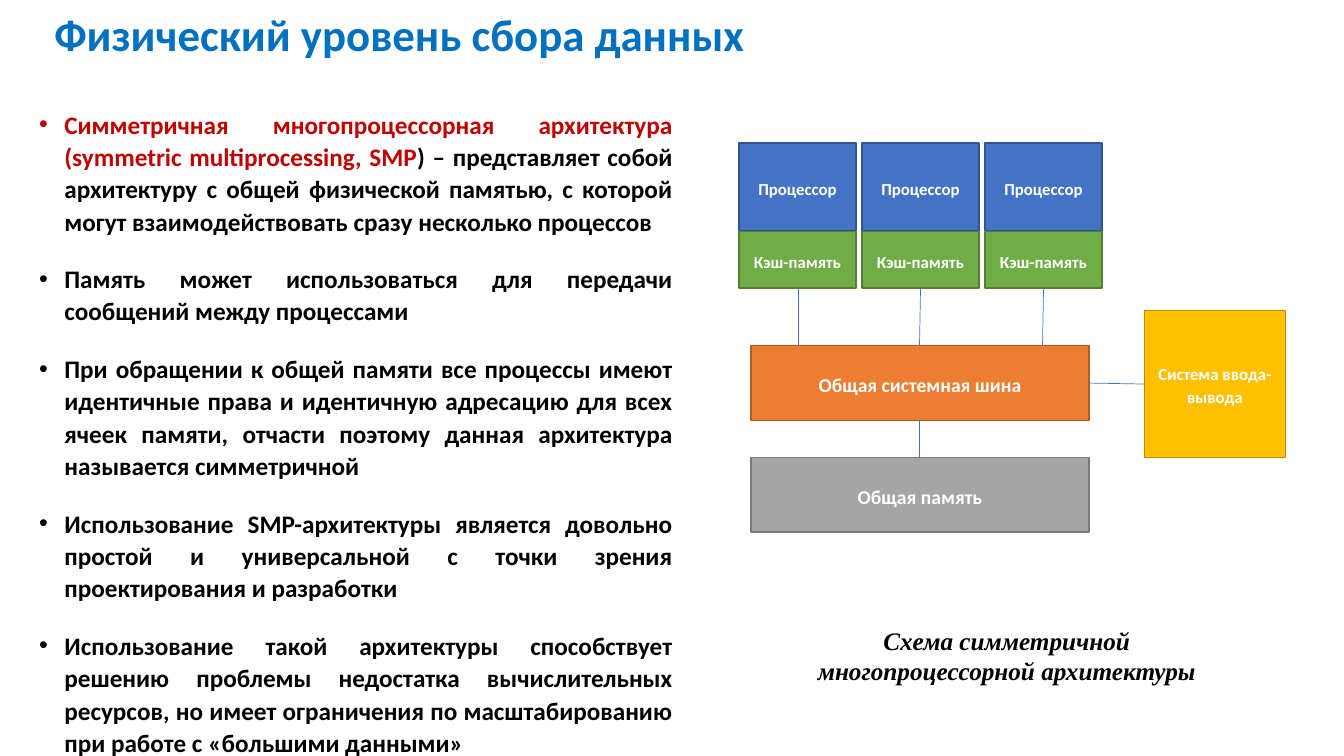
from typing import NamedTuple

from lxml import etree
from pptx import Presentation, util as u
from pptx.dml.color import RGBColor
from pptx.enum import shapes, text
from pptx.oxml.ns import qn

ALIGN = text.PP_ALIGN
ANCHOR = text.MSO_ANCHOR


class Box(NamedTuple):
    label: str
    left: float
    top: float
    width: float
    height: float
    fill: str
    edge: str
    size: int = 12


class Wire(NamedTuple):
    x1: float
    y1: float
    x2: float
    y2: float


def color(code: str) -> RGBColor:
    return RGBColor.from_string(code)


def write(frame, words: str, *, para=None, size: float = 18, font: str = "Calibri",
          ink: str = "000000", bold: bool = True, slant: bool = False,
          align=ALIGN.LEFT, space: float = 1.0, before: float = 0, after: float = 0):
    para = para or frame.paragraphs[0]
    para.alignment = align
    para.line_spacing = space
    para.space_before = u.Pt(before)
    para.space_after = u.Pt(after)
    run = para.add_run()
    run.text = words
    face = run.font
    face.name, face.size = font, u.Pt(size)
    face.bold, face.italic = bold, slant
    face.color.rgb = color(ink)
    return para


def add_text(slide, left: float, top: float, width: float, height: float):
    area = slide.shapes.add_textbox(*map(u.Inches, (left, top, width, height)))
    area.text_frame.word_wrap = True
    return area.text_frame


def add_bullet(para) -> None:
    props = para._p.get_or_add_pPr()
    props.set("marL", str(u.Inches(0.25)))
    props.set("indent", str(u.Inches(-0.25)))
    etree.SubElement(props, qn("a:buFont")).set("typeface", "Arial")
    etree.SubElement(props, qn("a:buChar")).set("char", "•")


def draw_box(slide, box: Box) -> None:
    place = map(u.Inches, (box.left, box.top, box.width, box.height))
    rect = slide.shapes.add_shape(shapes.MSO_SHAPE.RECTANGLE, *place)
    rect.shadow.inherit = False
    rect.fill.solid()
    rect.fill.fore_color.rgb = color(box.fill)
    rect.line.color.rgb = color(box.edge)
    rect.line.width = u.Pt(1)
    frame = rect.text_frame
    frame.word_wrap = True
    frame.vertical_anchor = ANCHOR.MIDDLE
    write(frame, box.label, size=box.size, ink="FFFFFF", align=ALIGN.CENTER,
          space=1.15, after=10)


def draw_wire(slide, wire: Wire) -> None:
    line = slide.shapes.add_connector(shapes.MSO_CONNECTOR.STRAIGHT, *map(u.Inches, wire))
    line.line.color.rgb = color("4472C4")
    line.line.width = u.Pt(0.5)
    etree.SubElement(line._element.spPr, qn("a:effectLst"))


POINTS = [
    [("Симметричная многопроцессорная архитектура (symmetric multiprocessing, SMP", "C00000"),
     (") – представляет собой архитектуру с общей физической памятью, с которой могут "
      "взаимодействовать сразу несколько процессов", "000000")],
    [("Память может использоваться для передачи сообщений между процессами", "000000")],
    [("При обращении к общей памяти все процессы имеют идентичные права и идентичную "
      "адресацию для всех ячеек памяти, отчасти поэтому данная архитектура называется "
      "симметричной", "000000")],
    [("Использование SMP-архитектуры является довольно простой и универсальной с точки "
      "зрения проектирования и разработки", "000000")],
    [("Использование такой архитектуры способствует решению проблемы недостатка "
      "вычислительных ресурсов, но имеет ограничения по масштабированию при работе с "
      "«большими данными»", "000000")],
]

COLUMNS = [7.33 + 1.22 * i for i in range(3)]
BOXES = [
    Box("Общая системная шина", 7.45, 3.43, 3.35, 0.74, "ED7D31", "AF5C24", 14),
    Box("Общая память", 7.45, 4.54, 3.35, 0.74, "A5A5A5", "7A7A7A", 14),
    Box("Система ввода-вывода", 11.35, 3.08, 1.4, 1.46, "FFC000", "BD8E00"),
]
for left in COLUMNS:
    BOXES += [
        Box("Процессор", left, 1.42, 1.16, 0.87, "4472C4", "325491"),
        Box("Кэш-память", left, 2.3, 1.16, 0.56, "70AD47", "538035"),
    ]
WIRES = [
    Wire(7.92, 2.86, 7.92, 3.43),
    Wire(9.13, 2.86, 9.12, 3.43),
    Wire(10.35, 2.86, 10.34, 3.43),
    Wire(9.12, 4.17, 9.12, 4.54),
    Wire(10.79, 3.8, 11.35, 3.81),
]


def main() -> None:
    deck = Presentation()
    deck.slide_width, deck.slide_height = u.Inches(13.33), u.Inches(7.5)
    slide = deck.slides.add_slide(deck.slide_layouts[6])

    title = add_text(slide, 0.44, 0, 11.5, 1.45)
    title.margin_top = u.Inches(0.13)
    write(title, "Физический уровень сбора данных", size=32, ink="0070C0", space=0.9)

    body = add_text(slide, 0.29, 1.01, 6.48, 5.91)
    for i, point in enumerate(POINTS):
        para = body.add_paragraph() if i else body.paragraphs[0]
        for words, ink in point:
            write(body, words, para=para, ink=ink, align=ALIGN.JUSTIFY,
                  space=1.07, before=10, after=8)
        add_bullet(para)

    for box in BOXES:
        draw_box(slide, box)
    for wire in WIRES:
        draw_wire(slide, wire)

    note = add_text(slide, 7.65, 6.15, 4.67, 0.71)
    write(note, "Схема симметричной многопроцессорной архитектуры",
          font="Times New Roman", slant=True, align=ALIGN.CENTER)
    deck.save("out.pptx")


if __name__ == "__main__":
    main()
